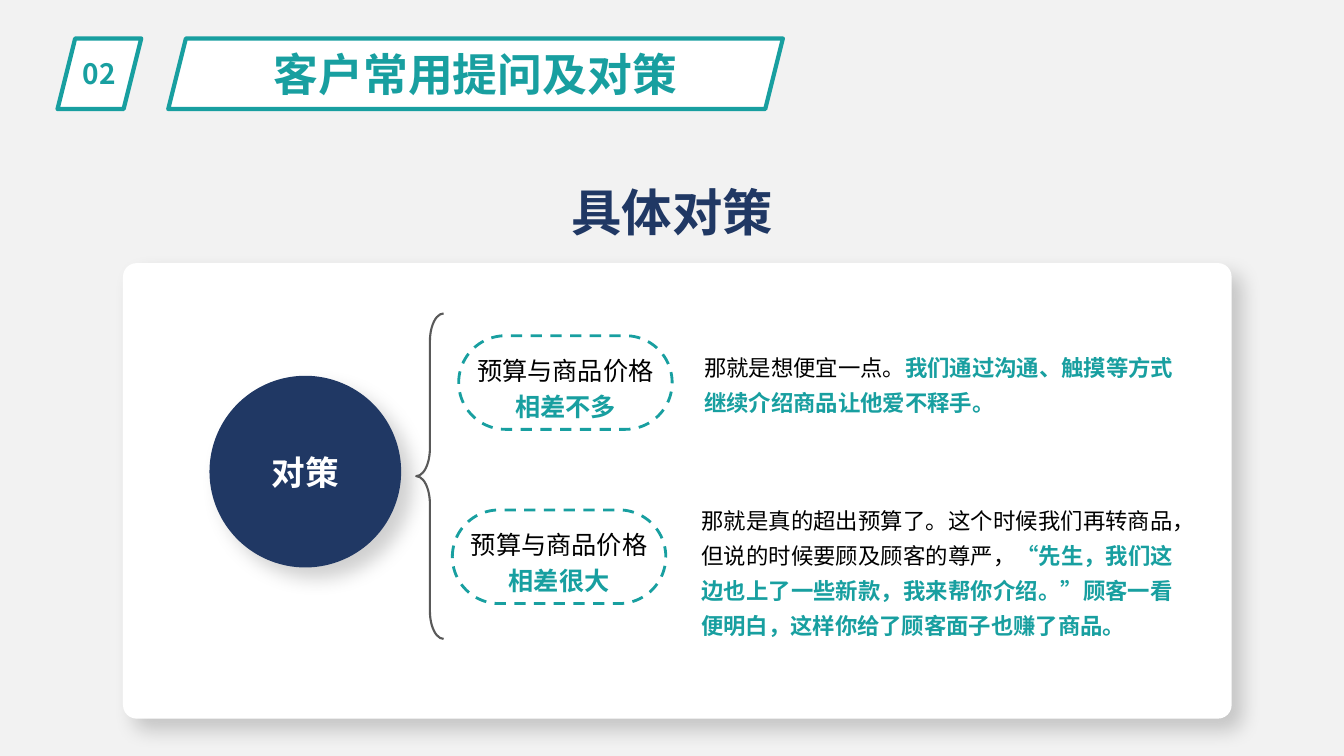
from dataclasses import dataclass

from lxml import etree
from pptx import Presentation
from pptx.dml.color import RGBColor
from pptx.enum.dml import MSO_LINE
from pptx.enum.shapes import MSO_SHAPE
from pptx.enum.text import MSO_ANCHOR, MSO_AUTO_SIZE, PP_ALIGN
from pptx.oxml.ns import qn
from pptx.shapes.autoshape import Shape
from pptx.slide import Slide
from pptx.util import Cm, Pt

LEFT, CENTER, JUSTIFY = PP_ALIGN.LEFT, PP_ALIGN.CENTER, PP_ALIGN.JUSTIFY
MIDDLE = MSO_ANCHOR.MIDDLE
DASH = MSO_LINE.DASH
TITLE_ONLY = 5


@dataclass(frozen=True)
class Theme:
    font: str = "Noto Sans CJK SC"
    page: str = "F2F2F2"
    white: str = "FFFFFF"
    teal: str = "189FA0"
    navy: str = "203864"
    black: str = "000000"
    brace: str = "595959"
    heading_size: int = 36
    title_size: int = 32
    hub_size: int = 24
    number_size: int = 20
    label_size: int = 18
    answer_size: int = 16


@dataclass(frozen=True)
class Box:
    """Left, top, width and height in centimetres."""
    left: float
    top: float
    width: float
    height: float

    def lengths(self) -> tuple[Cm, Cm, Cm, Cm]:
        return Cm(self.left), Cm(self.top), Cm(self.width), Cm(self.height)


@dataclass(frozen=True)
class Case:
    pill: Box
    gap: str
    answer: Box
    align: PP_ALIGN
    opening: str
    advice: str


THEME = Theme()
NUMBER_BOX = Box(1.45, 0.97, 2.11, 1.78)
TITLE_BOX = Box(4.24, 0.97, 15.49, 1.78)
HEADING_BOX = Box(1.85, 4.45, 30.18, 1.73)
CARD_BOX = Box(3.1, 6.63, 27.94, 11.48)
HUB_BOX = Box(5.28, 9.47, 4.83, 4.83)
BRACE_BOX = Box(10.49, 7.9, 0.69, 8.2)

CASES = [
    Case(Box(11.56, 8.46, 5.38, 2.36), "相差不多",
         Box(17.5, 8.59, 12.4, 1.96), LEFT,
         "那就是想便宜一点。",
         "我们通过沟通、触摸等方式继续介绍商品让他爱不释手。"),
    Case(Box(11.4, 12.85, 5.38, 2.36), "相差很大",
         Box(17.42, 12.45, 12.4, 3.81), JUSTIFY,
         "那就是真的超出预算了。这个时候我们再转商品，但说的时候要顾及顾客的尊严，",
         "“先生，我们这边也上了一些新款，我来帮你介绍。”顾客一看便明白，这样你给了顾客面子也赚了商品。"),
]


def rgb(color: str) -> RGBColor:
    return RGBColor.from_string(color)


def format_paragraph(paragraph, size: int, color: str, bold: bool = False,
                     align: PP_ALIGN = CENTER, spacing: float = 1.0) -> None:
    paragraph.alignment = align
    paragraph.line_spacing = spacing
    font = paragraph.font
    font.size, font.bold, font.name = Pt(size), bold, THEME.font
    font.color.rgb = rgb(color)
    # East Asian typeface
    defaults = paragraph._p.find(qn("a:pPr")).find(qn("a:defRPr"))
    etree.SubElement(defaults, qn("a:ea"), typeface=THEME.font)


def write_line(shape: Shape, text: str, size: int, color: str) -> None:
    frame = shape.text_frame
    frame.text = text
    frame.word_wrap = True
    frame.vertical_anchor = MIDDLE
    format_paragraph(frame.paragraphs[0], size, color, bold=True)


def add_panel(slide: Slide, preset: MSO_SHAPE, box: Box, fill: str | None = None,
              line: str | None = None, width: float = 1) -> Shape:
    panel = slide.shapes.add_shape(preset, *box.lengths())
    panel.shadow.inherit = False
    if fill:
        panel.fill.solid()
        panel.fill.fore_color.rgb = rgb(fill)
    else:
        panel.fill.background()
    if line:
        panel.line.color.rgb = rgb(line)
        panel.line.width = Pt(width)
    else:
        panel.line.fill.background()
    return panel


def add_shadow(shape: Shape) -> None:
    effects = shape._element.spPr.find(qn("a:effectLst"))
    shadow = etree.SubElement(
        effects, qn("a:outerShdw"), blurRad=str(Pt(14)), dist=str(Pt(11)),
        dir=str(45 * 60000), algn="tl", rotWithShape="0")
    color = etree.SubElement(shadow, qn("a:srgbClr"), val=THEME.black)
    etree.SubElement(color, qn("a:alpha"), val="18000")


def add_header(slide: Slide) -> None:
    number = add_panel(slide, MSO_SHAPE.PARALLELOGRAM, NUMBER_BOX,
                       THEME.white, THEME.teal, 3)
    number.text_frame.margin_left = number.text_frame.margin_right = 0
    write_line(number, "02", THEME.number_size, THEME.teal)

    add_panel(slide, MSO_SHAPE.PARALLELOGRAM, TITLE_BOX, THEME.white, THEME.teal, 3)
    title = slide.shapes.title
    title.left, title.top, title.width, title.height = TITLE_BOX.lengths()
    title.text_frame.auto_size = MSO_AUTO_SIZE.NONE
    write_line(title, "客户常用提问及对策", THEME.title_size, THEME.teal)
    # Bring the title in front of its frame
    slide.shapes._spTree.append(title._element)


def add_case(slide: Slide, case: Case) -> None:
    # Dashed pill with the situation
    pill = add_panel(slide, MSO_SHAPE.ROUNDED_RECTANGLE, case.pill,
                     line=THEME.teal, width=2)
    pill.adjustments[0] = 0.5
    pill.line.dash_style = DASH
    frame = pill.text_frame
    frame.word_wrap = False
    frame.vertical_anchor = MIDDLE
    frame.margin_top, frame.margin_bottom = Cm(0.15), 0
    frame.text = f"预算与商品价格\n{case.gap}"
    situation, gap = frame.paragraphs
    format_paragraph(situation, THEME.label_size, THEME.black, spacing=1.2)
    format_paragraph(gap, THEME.label_size, THEME.teal, bold=True, spacing=1.2)

    # Answer with highlighted advice
    answer = slide.shapes.add_textbox(*case.answer.lengths()).text_frame
    answer.word_wrap = True
    paragraph = answer.paragraphs[0]
    format_paragraph(paragraph, THEME.answer_size, THEME.black,
                     align=case.align, spacing=1.3)
    paragraph.add_run().text = case.opening
    advice = paragraph.add_run()
    advice.text = case.advice
    advice.font.bold = True
    advice.font.color.rgb = rgb(THEME.teal)


def main() -> None:
    deck = Presentation()
    deck.slide_width, deck.slide_height = Cm(33.87), Cm(19.05)
    slide = deck.slides.add_slide(deck.slide_layouts[TITLE_ONLY])
    slide.background.fill.solid()
    slide.background.fill.fore_color.rgb = rgb(THEME.page)

    add_header(slide)

    # Section heading
    heading = slide.shapes.add_textbox(*HEADING_BOX.lengths())
    write_line(heading, "具体对策", THEME.heading_size, THEME.navy)

    # Card and hub
    card = add_panel(slide, MSO_SHAPE.ROUNDED_RECTANGLE, CARD_BOX, THEME.white)
    card.adjustments[0] = 0.03
    add_shadow(card)
    hub = add_panel(slide, MSO_SHAPE.OVAL, HUB_BOX, THEME.navy)
    add_shadow(hub)
    write_line(hub, "对策", THEME.hub_size, THEME.white)

    # Brace leading to the cases
    brace = add_panel(slide, MSO_SHAPE.LEFT_BRACE, BRACE_BOX,
                      line=THEME.brace, width=1.5)
    brace.adjustments[0] = 1.02
    for case in CASES:
        add_case(slide, case)

    deck.save("out.pptx")


if __name__ == "__main__":
    main()
